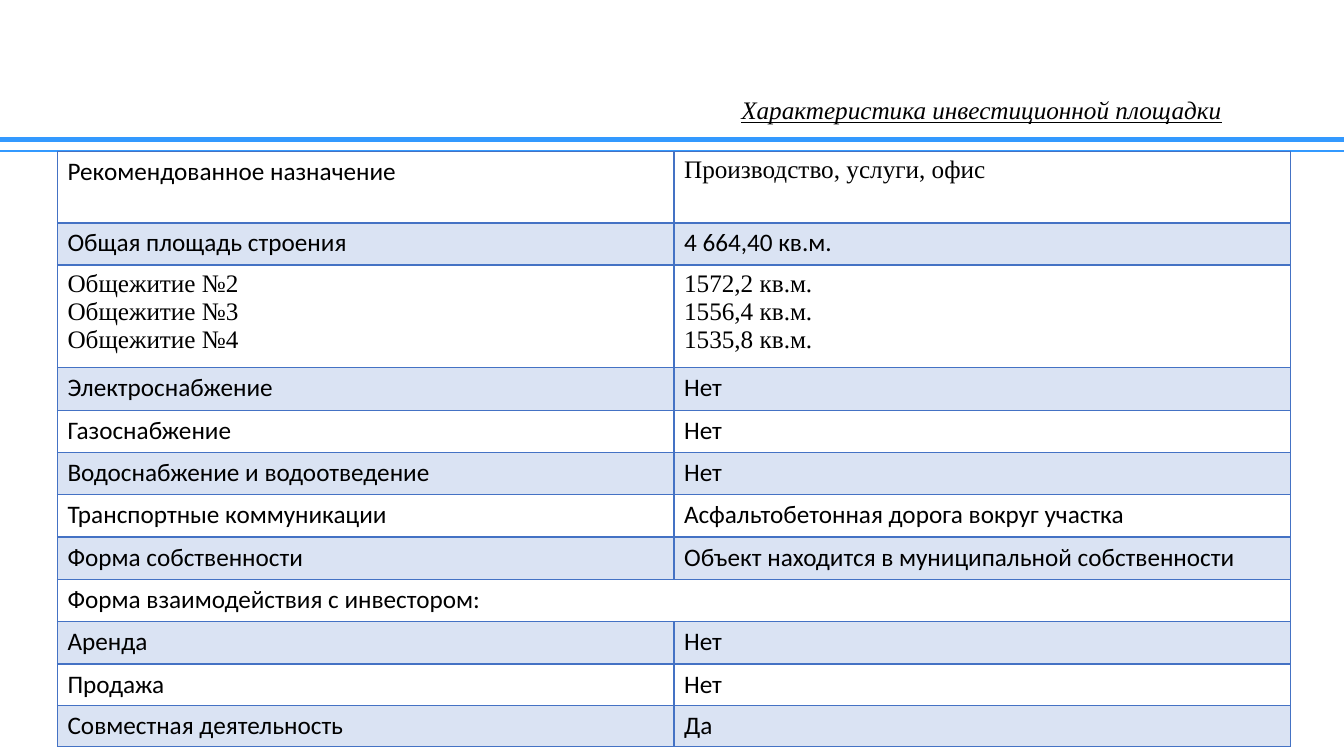
"""Builds the slide with the characteristics of an investment site."""
from lxml import etree
from pptx import Presentation, util as u
from pptx.dml.color import RGBColor
from pptx.enum import shapes, text
from pptx.oxml.ns import qn

COLORS = {"rule": "3399FF", "border": "4472C4", "band": "DAE3F3", "text": "000000"}
SERIF, SANS = "Times New Roman", "Calibri"


def write(frame, lines, font=SANS, italic=False, underline=False,
          align=text.PP_ALIGN.LEFT, spacing=1.0):
    for number, line in enumerate(lines.split("\n")):
        paragraph = frame.add_paragraph() if number else frame.paragraphs[0]
        paragraph.alignment = align
        paragraph.line_spacing = spacing
        run = paragraph.add_run()
        run.text = line
        run.font.name = font
        run.font.size = u.Pt(18)
        run.font.italic = italic
        run.font.underline = underline
        run.font.color.rgb = RGBColor.from_string(COLORS["text"])


def add_borders(cell, **widths):
    properties = cell._tc.get_or_add_tcPr()
    for side, width in widths.items():
        border = etree.SubElement(properties, qn(f"a:ln{side}"), w=str(u.Pt(width)))
        fill = etree.SubElement(border, qn("a:solidFill"))
        etree.SubElement(fill, qn("a:srgbClr"), val=COLORS["border"])


deck = Presentation()
deck.slide_width, deck.slide_height = u.Inches(13.33), u.Inches(7.5)
slide = deck.slides.add_slide(deck.slide_layouts[6])

for top, weight in [(1.38, 3.5), (1.5, 1.5)]:
    rule = slide.shapes.add_connector(
        shapes.MSO_CONNECTOR.STRAIGHT, 0, u.Inches(top), deck.slide_width, u.Inches(top))
    rule.line.color.rgb = RGBColor.from_string(COLORS["rule"])
    rule.line.width = u.Pt(weight)
    etree.SubElement(rule._element.spPr, qn("a:effectLst"))

heading = slide.shapes.add_textbox(
    u.Inches(6.67), u.Inches(0.97), u.Inches(6.13), u.Inches(0.27)).text_frame
heading.word_wrap = True
heading.vertical_anchor = text.MSO_ANCHOR.MIDDLE
write(heading, "Характеристика инвестиционной площадки", font=SERIF, italic=True,
      underline=True, align=text.PP_ALIGN.CENTER, spacing=0.9)

features = [
    (0.71, "Рекомендованное назначение", "Производство, услуги, офис"),
    (0.42, "Общая площадь строения", "4 664,40 кв.м."),
    (1.02, "Общежитие №2\nОбщежитие №3\nОбщежитие №4",
     "1572,2 кв.м.\n1556,4 кв.м.\n1535,8 кв.м."),
    (0.42, "Электроснабжение", "Нет"),
    (0.42, "Газоснабжение", "Нет"),
    (0.42, "Водоснабжение и водоотведение", "Нет"),
    (0.42, "Транспортные коммуникации", "Асфальтобетонная дорога вокруг участка"),
    (0.42, "Форма собственности", "Объект находится в муниципальной собственности"),
    (0.42, "Форма взаимодействия с инвестором:", ""),
    (0.42, "Аренда", "Нет"),
    (0.41, "Продажа", "Нет"),
    (0.41, "Совместная деятельность", "Да"),
]
serif_cells = {(0, 1), (2, 0), (2, 1)}

site = slide.shapes.add_table(
    len(features), 2, u.Inches(0.57), u.Inches(1.5), u.Inches(12.23), u.Inches(5.89)).table
site.first_row = site.horz_banding = False

for row, (height, *entries) in enumerate(features):
    site.rows[row].height = u.Inches(height)
    for column, entry in enumerate(entries):
        cell = site.cell(row, column)
        add_borders(cell, L=1, R=1, T=2 if row == 1 else 1, B=2 if row == 0 else 1)
        if row % 2:
            cell.fill.solid()
            cell.fill.fore_color.rgb = RGBColor.from_string(COLORS["band"])
        else:
            cell.fill.background()
        if entry:
            write(cell.text_frame, entry, font=SERIF if (row, column) in serif_cells else SANS)
    if not entries[1]:
        site.cell(row, 0).merge(site.cell(row, 1))

deck.save("out.pptx")
